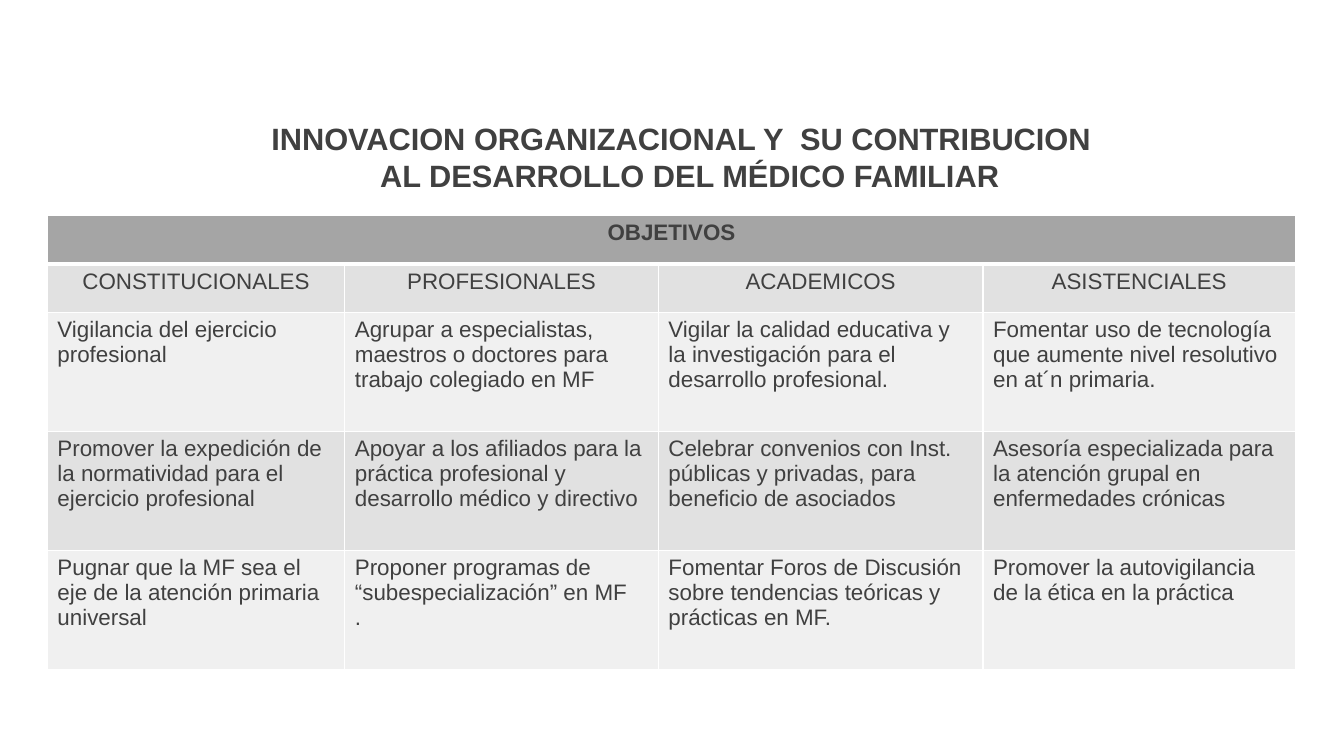
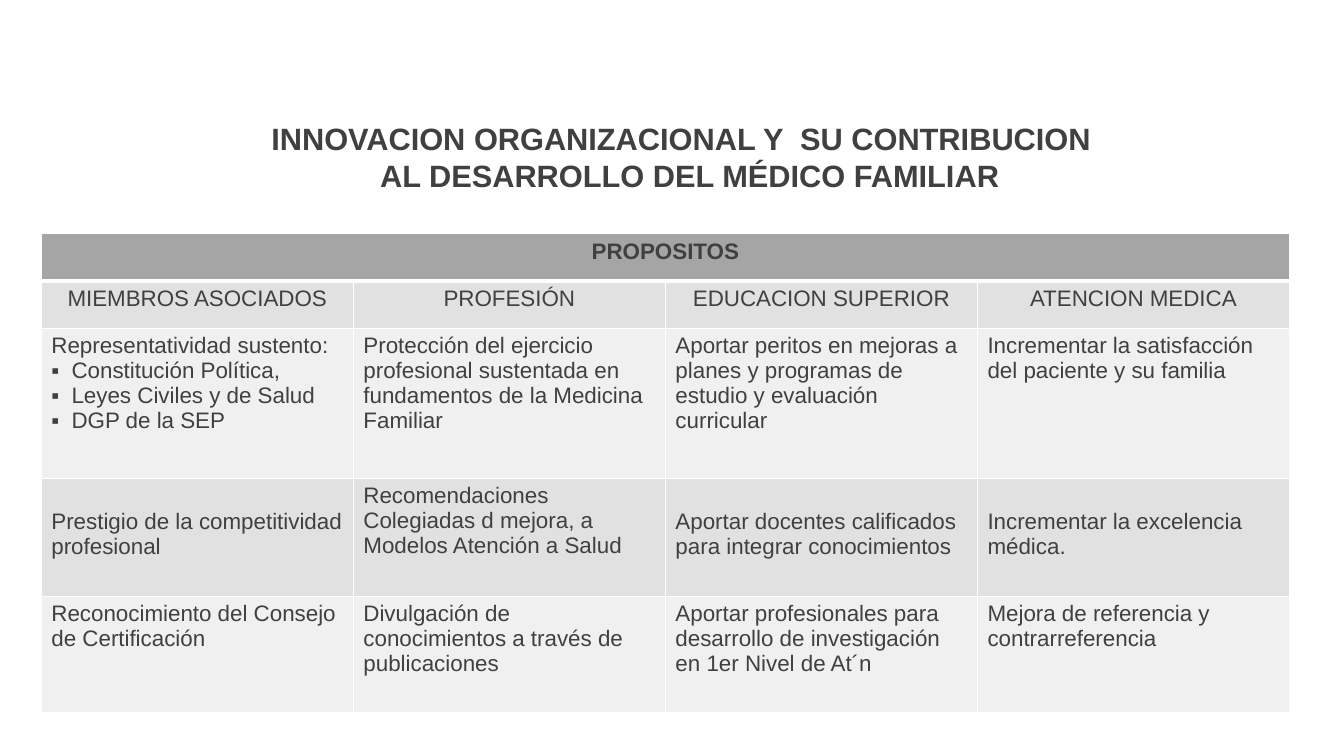
from pptx import Presentation
from pptx.dml.color import RGBColor
from pptx.enum.text import MSO_ANCHOR, MSO_AUTO_SIZE, PP_ALIGN
from pptx.oxml import parse_xml
from pptx.oxml.ns import nsdecls
from pptx.util import Inches, Pt

TEXT = RGBColor(0x40, 0x40, 0x40)
HEADER = RGBColor(0xA5, 0xA5, 0xA5)
BAND_DARK = RGBColor(0xE1, 0xE1, 0xE1)
BAND_LIGHT = RGBColor(0xF0, 0xF0, 0xF0)
BORDER = RGBColor(0xFF, 0xFF, 0xFF)

TITLE_LINES = [
    ("INNOVACION ORGANIZACIONAL Y  SU CONTRIBUCION", 0.17),
    ("AL DESARROLLO DEL MÉDICO FAMILIAR", 0),
]
BULLET = "▪"

OBJETIVOS = [
    ["CONSTITUCIONALES", "PROFESIONALES", "ACADEMICOS", "ASISTENCIALES"],
    ["Vigilancia del ejercicio profesional",
     "Agrupar a especialistas, maestros o doctores para trabajo colegiado en MF",
     "Vigilar la calidad educativa y la investigación para el desarrollo profesional.",
     "Fomentar uso de tecnología que aumente nivel resolutivo en at´n primaria."],
    ["Promover la expedición de la normatividad para el ejercicio profesional",
     "Apoyar a los afiliados para la práctica profesional y desarrollo médico y directivo",
     "Celebrar convenios con Inst. públicas y privadas, para beneficio de asociados",
     "Asesoría especializada para la atención grupal en enfermedades crónicas"],
    ["Pugnar que la MF sea el eje de la atención primaria universal",
     "Proponer programas de “subespecialización” en MF\n.",
     "Fomentar Foros de Discusión sobre tendencias teóricas y prácticas en MF.",
     "Promover la autovigilancia de la ética en la práctica"],
]

PROPOSITOS = [
    ["MIEMBROS ASOCIADOS", "PROFESIÓN", "EDUCACION SUPERIOR", "ATENCION MEDICA"],
    ["Representatividad sustento:\n▪Constitución Política,\n▪Leyes Civiles y de Salud\n▪DGP de la SEP",
     "Protección del ejercicio profesional sustentada en fundamentos de la Medicina Familiar",
     "Aportar peritos en mejoras a planes y programas de estudio y evaluación curricular",
     "Incrementar la satisfacción del paciente y su familia"],
    ["Prestigio de la competitividad profesional",
     "Recomendaciones Colegiadas d mejora, a Modelos Atención a Salud",
     "Aportar docentes calificados para integrar conocimientos",
     "Incrementar la excelencia médica."],
    ["Reconocimiento del Consejo de Certificación",
     "Divulgación de conocimientos a través de publicaciones",
     "Aportar profesionales para desarrollo de investigación en 1er Nivel de At´n",
     "Mejora de referencia y contrarreferencia"],
]


class Deck:
    base = {"name": "Arial", "size": Pt(16), "bold": False}
    header = {**base, "bold": True}
    title_format = {**header, "size": Pt(22)}

    def __init__(self):
        self.prs = Presentation()
        self.prs.slide_width = Inches(13.33)
        self.prs.slide_height = Inches(7.5)
        self.s = None

    def format(self, p, values, align):
        p.alignment = align
        for r in p.runs:
            for key, value in values.items():
                setattr(r.font, key, value)
            r.font.color.rgb = TEXT

    def slide(self):
        self.s = self.prs.slides.add_slide(self.prs.slide_layouts[5])
        self.title()

    def title(self):
        sp = self.s.shapes.title
        sp.left, sp.top, sp.width, sp.height = map(Inches, (1.05, 1.14, 11.58, 0.84))
        tf = sp.text_frame
        tf.word_wrap = True
        tf.auto_size = MSO_AUTO_SIZE.NONE
        tf.vertical_anchor = MSO_ANCHOR.TOP
        tf.text = "\n".join(line for line, _ in TITLE_LINES)
        for p, (_, indent) in zip(tf.paragraphs, TITLE_LINES):
            p._p.get_or_add_pPr().set("marR", str(Inches(indent)))
            self.format(p, self.title_format, PP_ALIGN.CENTER)

    def bullet(self, p):
        pPr = p._p.get_or_add_pPr()
        pPr.set("marL", str(Inches(0.2)))
        pPr.set("indent", str(-Inches(0.2)))
        pPr.append(parse_xml(f'<a:buFont {nsdecls("a")} typeface="Arial"/>'))
        pPr.append(parse_xml(f'<a:buChar {nsdecls("a")} char="{BULLET}"/>'))

    def borders(self, cell, row):
        tcPr = cell._tc.get_or_add_tcPr()
        thick = {"lnB"} if row == 0 else {"lnT"} if row == 1 else set()
        for side in ("lnL", "lnR", "lnT", "lnB"):
            width = Pt(3 if side in thick else 1)
            tcPr.append(parse_xml(
                f'<a:{side} {nsdecls("a")} w="{width}"><a:solidFill>'
                f'<a:srgbClr val="{BORDER}"/></a:solidFill></a:{side}>'))

    def cell(self, cell, text, row):
        self.borders(cell, row)
        cell.fill.solid()
        cell.fill.fore_color.rgb = HEADER if row == 0 else BAND_DARK if row % 2 else BAND_LIGHT
        cell.text_frame.text = text
        for p in cell.text_frame.paragraphs:
            if p.text.startswith(BULLET):
                p.runs[0].text = p.text.removeprefix(BULLET)
                self.bullet(p)
            self.format(p, self.base if row else self.header,
                        PP_ALIGN.CENTER if row < 2 else PP_ALIGN.LEFT)

    def table(self, heading, rows, left, top, widths, heights):
        grid = [[heading] + [""] * (len(widths) - 1)] + rows
        table = self.s.shapes.add_table(
            len(grid), len(widths), Inches(left), Inches(top),
            Inches(sum(widths)), Inches(sum(heights))).table
        table.first_row = table.horz_banding = False
        for column, width in zip(table.columns, widths):
            column.width = Inches(width)
        for row, height in zip(table.rows, heights):
            row.height = Inches(height)
        for i, texts in enumerate(grid):
            for j, text in enumerate(texts):
                self.cell(table.cell(i, j), text, i)
        table.cell(0, 0).merge(table.cell(0, len(widths) - 1))
        return table


def main():
    deck = Deck()
    deck.slide()
    deck.table("OBJETIVOS", OBJETIVOS, 0.47, 2.14,
               [2.95, 3.11, 3.22, 3.1], [0.48] * 2 + [1.18] * 3)

    deck.slide()
    table = deck.table("PROPOSITOS", PROPOSITOS, 0.41, 2.32,
                       [3.095] * 4, [0.47, 0.47, 1.49, 1.17, 1.15])
    for column in (0, 2, 3):
        table.cell(3, column).margin_top = Inches(0.3)

    deck.prs.save("out.pptx")


if __name__ == "__main__":
    main()
